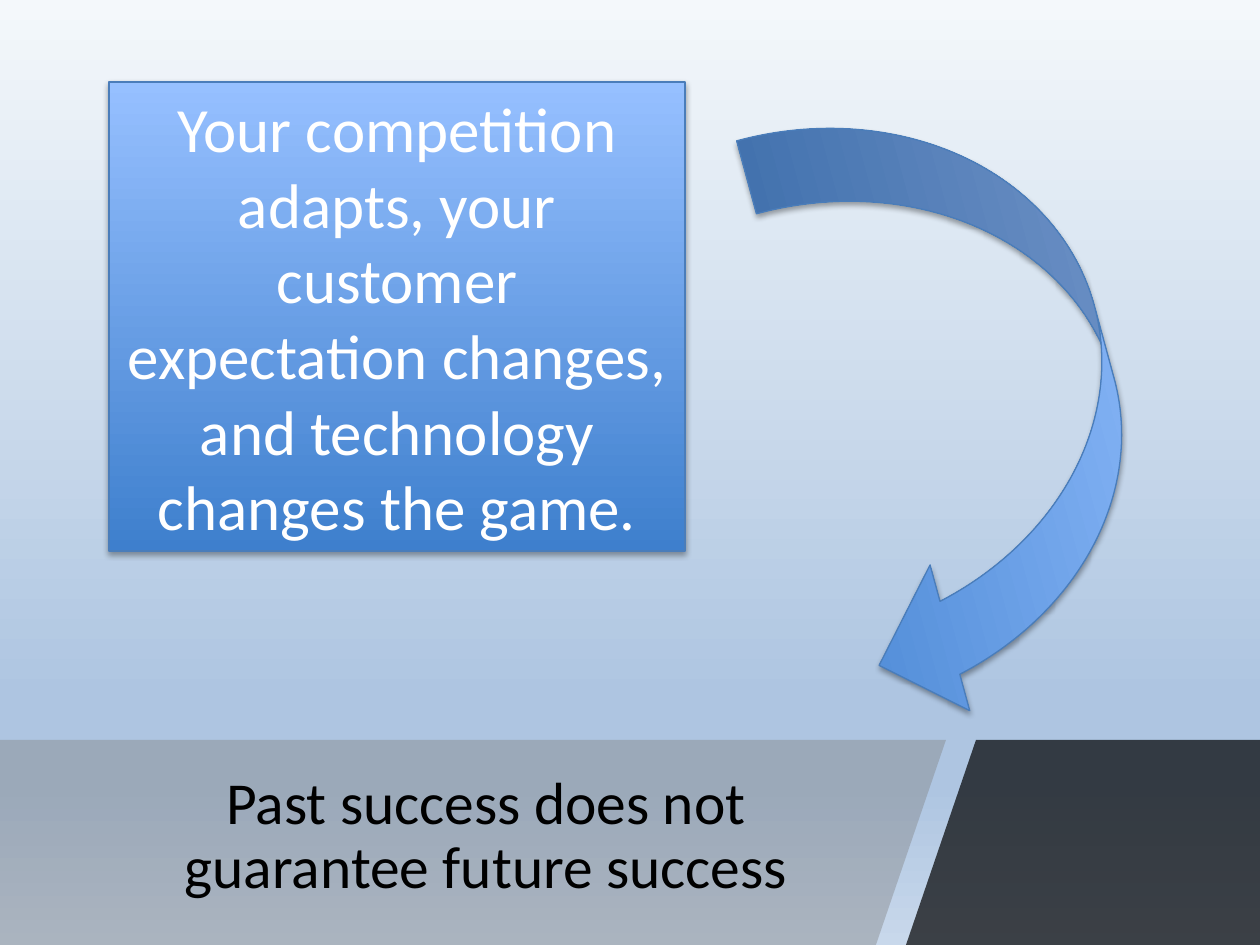
from lxml import etree
from pptx import Presentation
from pptx import util as u
from pptx.dml.color import RGBColor
from pptx.enum import shapes, text
from pptx.oxml.ns import qn

EMU_PER_PX = 914400 / 126
FONT = "Calibri"
BLUES = [(0, "3E7FCD"), (100, "96C0FF")]
SKY = [(0, "F4F8FB"), (74, "AEC5E1"), (83, "AEC5E1"), (100, "C8D8EB")]


def px(n):
    return u.Emu(round(n * EMU_PER_PX))


def rgb(value):
    return RGBColor.from_string(value)


def add_color(parent, value, alpha=None):
    color = etree.SubElement(parent, qn("a:srgbClr"), val=value)
    if alpha is not None:
        etree.SubElement(color, qn("a:alpha"), val=str(alpha * 1000))


def set_gradient(fill, element, stops, angle):
    fill.gradient()
    fill.gradient_angle = angle
    stop_list = element.xpath(".//a:gradFill/a:gsLst")[0]
    for old in list(stop_list):
        stop_list.remove(old)
    for position, value in stops:
        stop = etree.SubElement(stop_list, qn("a:gs"), pos=str(position * 1000))
        add_color(stop, value)


def add_shadow(sp):
    sp.shadow.inherit = False
    effects = sp._element.spPr.find(qn("a:effectLst"))
    shadow = etree.SubElement(effects, qn("a:outerShdw"), blurRad="40000",
                              dist="23000", dir="5400000", rotWithShape="0")
    add_color(shadow, "000000", 35)


def write(tf, content, size, color, spacing=None):
    tf.word_wrap = True
    tf.auto_size = text.MSO_AUTO_SIZE.NONE
    tf.vertical_anchor = text.MSO_ANCHOR.MIDDLE
    p = tf.paragraphs[0]
    p.alignment = text.PP_ALIGN.CENTER
    if spacing:
        p.line_spacing = spacing
    r = p.add_run()
    r.text = content
    r.font.name = FONT
    r.font.size = u.Pt(size)
    r.font.color.rgb = rgb(color)


def add_band(s, points, color, alpha):
    builder = s.shapes.build_freeform(*points[0], scale=EMU_PER_PX)
    builder.add_line_segments(points[1:], close=True)
    sp = builder.convert_to_shape()
    sp.shadow.inherit = False
    sp.line.fill.background()
    sp.fill.solid()
    sp.fill.fore_color.rgb = rgb(color)
    srgb = sp._element.spPr.xpath("./a:solidFill/a:srgbClr")[0]
    etree.SubElement(srgb, qn("a:alpha"), val=str(alpha * 1000))
    return sp


def add_blue_shape(s, kind, left, top, width, height, rotation=0):
    sp = s.shapes.add_shape(kind, px(left), px(top), px(width), px(height))
    sp.rotation = rotation
    set_gradient(sp.fill, sp._element.spPr, BLUES, 90)
    sp.line.color.rgb = rgb("4A7DBA")
    sp.line.width = u.Pt(0.75)
    add_shadow(sp)
    return sp


def place_title(s, band, content):
    title = s.shapes.title
    title.left, title.top = px(87), px(762)
    title.width, title.height = px(798), px(151)
    write(title.text_frame, content, 34, "000000", 0.9)
    band._element.addnext(title._element)


def main():
    prs = Presentation()
    prs.slide_width, prs.slide_height = px(1260), px(945)
    s = prs.slides.add_slide(prs.slide_layouts[5])
    set_gradient(s.background.fill, s._element, SKY, 270)

    band = add_band(s, [(0, 740), (946, 740), (876, 945), (0, 945)], "7F7F7F", 40)
    place_title(s, band, "Past success does not guarantee future success")
    add_band(s, [(976, 740), (1260, 740), (1260, 945), (906, 945)], "000000", 70)

    box = add_blue_shape(s, shapes.MSO_SHAPE.RECTANGLE, 109, 82, 576, 469)
    write(box.text_frame,
          "Your competition adapts, your customer expectation changes, "
          "and technology changes the game.", 36, "FFFFFF")
    add_blue_shape(s, shapes.MSO_SHAPE.CURVED_DOWN_ARROW, 654, 249, 619, 302, 74.8)
    prs.save("out.pptx")


if __name__ == "__main__":
    main()
